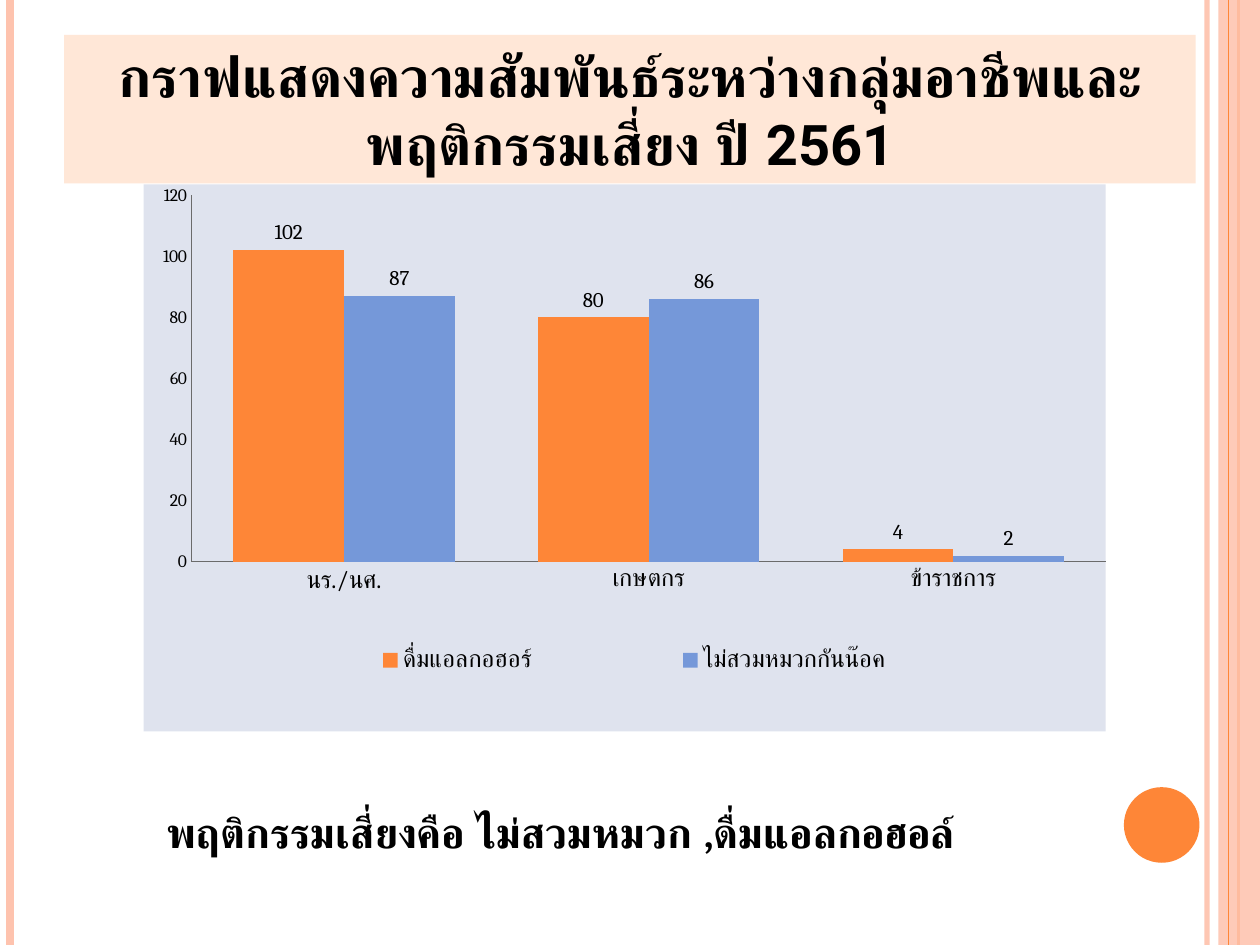
from lxml import etree
from pptx import Presentation
from pptx.chart.data import CategoryChartData
from pptx.dml.color import RGBColor
from pptx.enum.chart import XL_CHART_TYPE, XL_LABEL_POSITION, XL_LEGEND_POSITION, XL_TICK_MARK
from pptx.enum.shapes import MSO_CONNECTOR, MSO_SHAPE
from pptx.enum.text import MSO_ANCHOR, PP_ALIGN
from pptx.oxml.ns import qn
from pptx.util import Inches, Pt

WIDTH, HEIGHT = 10, 7.5
ORANGE, BLUE, PINK = "FE8637", "7598D9", "FEC3AE"
PEACH, PALE_BLUE, GREY, BLACK = "FFE7D7", "DFE3EE", "6B6B6B", "000000"


def color(value):
    return RGBColor.from_string(value)


def set_alpha(shape, percent):
    """Make the first colour of a shape partly transparent."""
    rgb = next(shape._element.spPr.iter(qn("a:srgbClr")))
    etree.SubElement(rgb, qn("a:alpha")).set("val", str(percent * 1000))


def set_layout(parent, index, inner=False, **shares):
    """Place a chart part by shares of the chart's size."""
    for old in parent.findall(qn("c:layout")):
        parent.remove(old)
    layout = etree.Element(qn("c:layout"))
    manual = etree.SubElement(layout, qn("c:manualLayout"))
    values = {"layoutTarget": "inner"} if inner else {}
    values.update(xMode="edge", yMode="edge", **shares)
    for tag, value in values.items():
        etree.SubElement(manual, qn(f"c:{tag}")).set("val", str(value))
    parent.insert(index, layout)


class SlideBuilder:
    """Places elements by shares of the slide: left, top, width, height."""

    def __init__(self, presentation, font="Cambria"):
        self.slide = presentation.slides.add_slide(presentation.slide_layouts[6])
        self.shapes = self.slide.shapes
        self.font = font

    def box(self, left, top, width, height):
        return (Inches(left * WIDTH), Inches(top * HEIGHT),
                Inches(width * WIDTH), Inches(height * HEIGHT))

    def stripe(self, x, line_color, weight, alpha=100):
        left, top, _, bottom = self.box(x, 0, 0, 1)
        line = self.shapes.add_connector(MSO_CONNECTOR.STRAIGHT, left, top, left, bottom)
        line.line.color.rgb = color(line_color)
        line.line.width = Pt(weight)
        if alpha < 100:
            set_alpha(line, alpha)
        etree.SubElement(line._element.spPr, qn("a:effectLst"))

    def shape(self, kind, area, fill, alpha=100):
        shape = self.shapes.add_shape(kind, *self.box(*area))
        shape.shadow.inherit = False
        shape.fill.solid()
        shape.fill.fore_color.rgb = color(fill)
        shape.line.fill.background()
        if alpha < 100:
            set_alpha(shape, alpha)
        return shape

    def label(self, shape, text, size, font=None, align=PP_ALIGN.LEFT,
              anchor=MSO_ANCHOR.TOP):
        frame = shape.text_frame
        frame.word_wrap = True
        frame.vertical_anchor = anchor
        paragraph = frame.paragraphs[0]
        paragraph.alignment = align
        run = paragraph.add_run()
        run.text = text
        run.font.name = font or self.font
        run.font.size = Pt(size)
        run.font.bold = True
        run.font.color.rgb = color(BLACK)

    def text(self, area, text, size):
        self.label(self.shapes.add_textbox(*self.box(*area)), text, size)

    def column_chart(self, area, categories, series, fill):
        data = CategoryChartData()
        data.categories = categories
        for name, values, _ in series:
            data.add_series(name, values)
        chart = self.shapes.add_chart(
            XL_CHART_TYPE.COLUMN_CLUSTERED, *self.box(*area), data).chart
        chart.has_title = False
        self.chart_font(chart.font, 10)

        # Chart background
        space = chart._chartSpace
        background = etree.Element(qn("c:spPr"))
        solid = etree.SubElement(background, qn("a:solidFill"))
        etree.SubElement(solid, qn("a:srgbClr")).set("val", fill)
        outline = etree.SubElement(background, qn("a:ln"))
        etree.SubElement(outline, qn("a:noFill"))
        space.find(qn("c:chart")).addnext(background)

        # Columns and their values
        plot = chart.plots[0]
        plot.gap_width = 75
        plot.overlap = 0
        plot.vary_by_categories = False
        for column, (_, _, column_color) in zip(plot.series, series):
            column.format.fill.solid()
            column.format.fill.fore_color.rgb = color(column_color)
            labels = column.data_labels
            labels.show_value = True
            labels.position = XL_LABEL_POSITION.OUTSIDE_END
            self.chart_font(labels.font, 12)

        # Axes
        for axis, size in ((chart.category_axis, 14), (chart.value_axis, 10)):
            axis.major_tick_mark = axis.minor_tick_mark = XL_TICK_MARK.NONE
            axis.has_major_gridlines = False
            axis.format.line.color.rgb = color(GREY)
            self.chart_font(axis.tick_labels.font, size)
        chart.value_axis.minimum_scale = 0
        chart.value_axis.maximum_scale = 120
        chart.value_axis.major_unit = 20

        # Legend and plot placement
        chart.has_legend = True
        legend = chart.legend
        legend.position = XL_LEGEND_POSITION.BOTTOM
        legend.include_in_layout = False
        self.chart_font(legend.font, 14)
        set_layout(legend._element, 1, x=0.1, y=0.83, w=0.82, h=0.08)
        set_layout(space.find(".//" + qn("c:plotArea")), 0, inner=True,
                   x=0.05, y=0.02, w=0.95, h=0.67)

    def chart_font(self, font, size):
        font.name = self.font
        font.size = Pt(size)
        font.color.rgb = color(BLACK)


def main():
    presentation = Presentation()
    presentation.slide_width = Inches(WIDTH)
    presentation.slide_height = Inches(HEIGHT)
    builder = SlideBuilder(presentation)

    # Side stripes and corner dot
    builder.stripe(0.958, PINK, 3, alpha=93)
    builder.stripe(0.008, PINK, 4.5)
    builder.stripe(0.983, ORANGE, 1.5)
    builder.shape(MSO_SHAPE.RECTANGLE, (0.967, 0, 0.033, 1), PINK, alpha=87)
    builder.stripe(0.975, ORANGE, 0.75)
    builder.shape(MSO_SHAPE.OVAL, (0.892, 0.833, 0.06, 0.08), ORANGE)

    # Risk behaviour by occupation
    builder.column_chart(
        (0.114, 0.195, 0.764, 0.579),
        ["นร./นศ.", "เกษตกร", "ข้าราชการ"],
        [("ดื่มแอลกอฮอร์", (102, 80, 4), ORANGE),
         ("ไม่สวมหมวกกันน๊อค", (87, 86, 2), BLUE)],
        PALE_BLUE)

    # Title band
    title = builder.shape(MSO_SHAPE.RECTANGLE, (0.051, 0.037, 0.898, 0.157), PEACH)
    builder.label(title, "กราฟแสดงความสัมพันธ์ระหว่างกลุ่มอาชีพและพฤติกรรมเสี่ยง ปี 2561",
                  32, font="Roboto", align=PP_ALIGN.CENTER, anchor=MSO_ANCHOR.MIDDLE)

    # Conclusion
    builder.text((0.122, 0.847, 0.776, 0.067),
                 "พฤติกรรมเสี่ยงคือ ไม่สวมหมวก ,ดื่มแอลกอฮอล์", 24)

    presentation.save("out.pptx")


if __name__ == "__main__":
    main()
